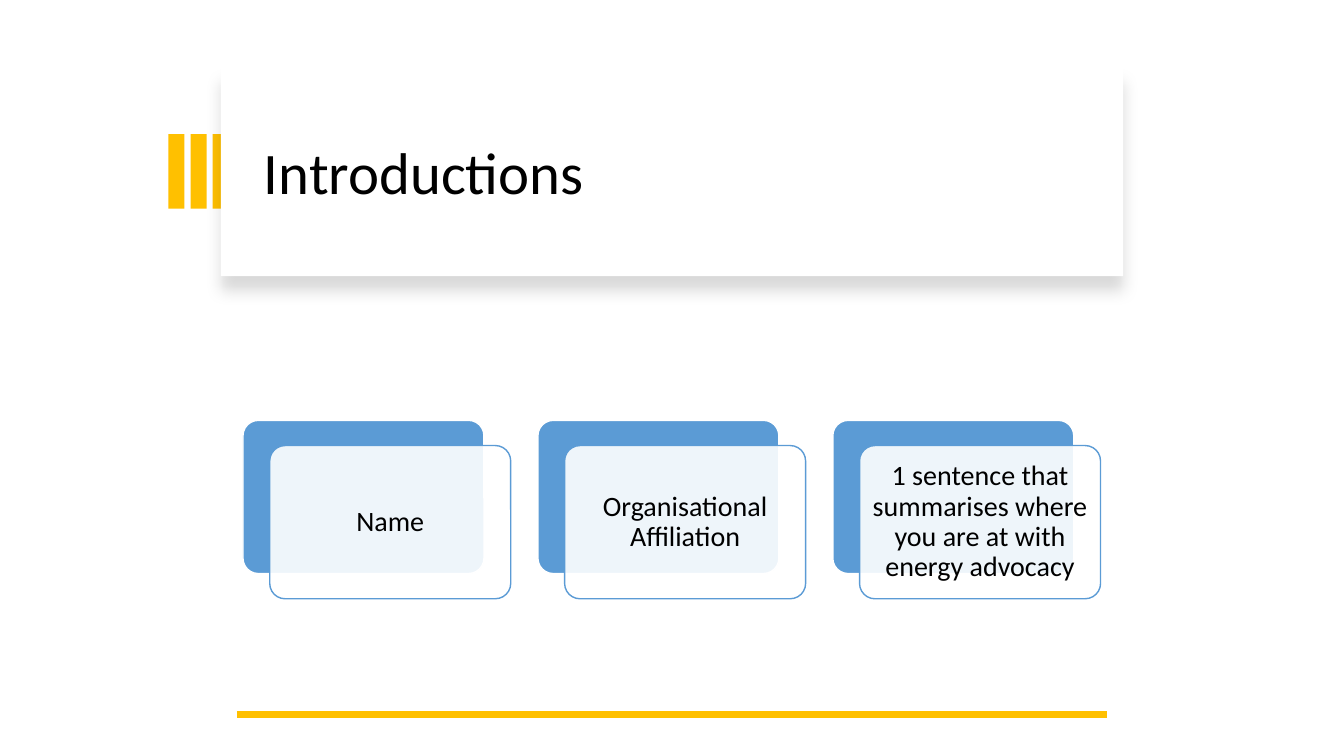
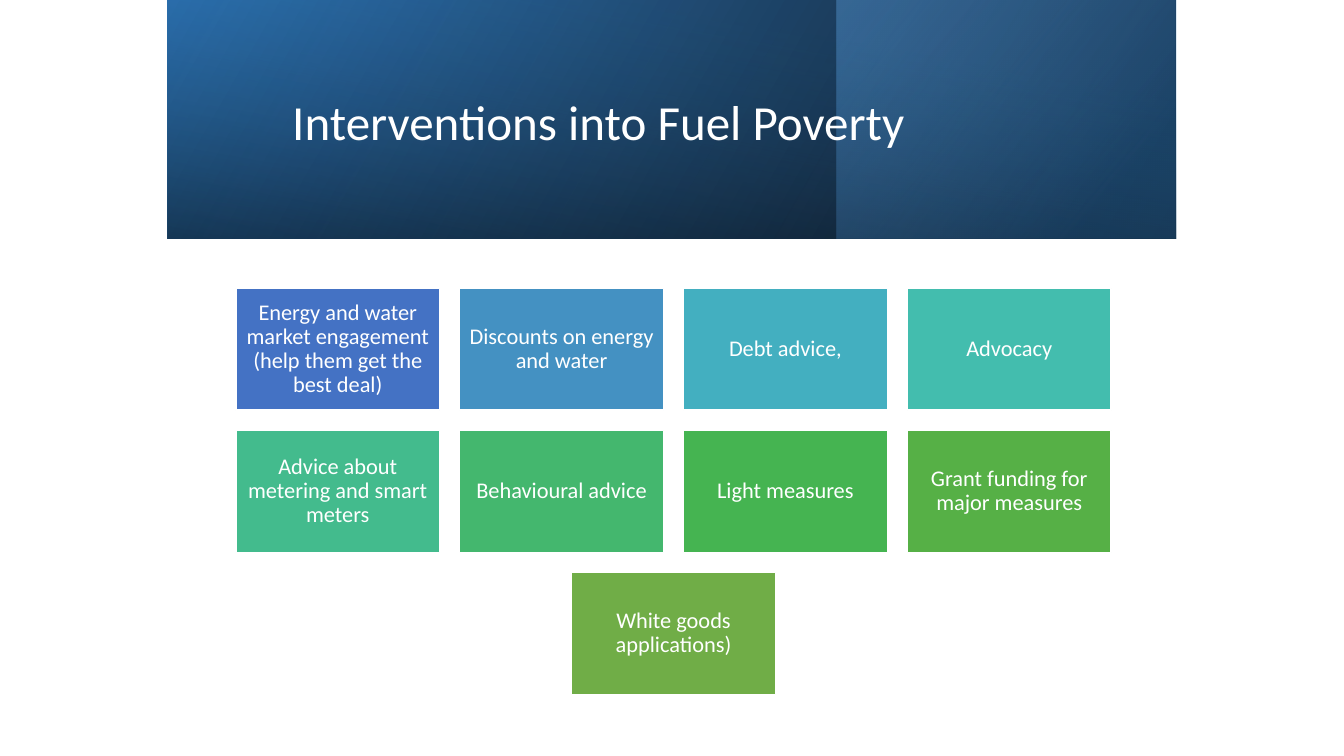
from dataclasses import dataclass
from typing import NamedTuple

from lxml import etree
from pptx import Presentation
from pptx import util as u
from pptx.dml.color import RGBColor
from pptx.enum import shapes, text
from pptx.oxml.ns import qn

SLIDE_W, SLIDE_H = 13.33, 7.5
FONT = "Calibri"
BLACK, WHITE = "000000", "FFFFFF"
GOLD, BLUE, DEEP_BLUE, NAVY = "FFC000", "5B9BD5", "2E75B6", "1F4E79"


class Box(NamedTuple):
    left: float
    top: float
    width: float
    height: float

    def emu(self) -> list[int]:
        return [u.Inches(v) for v in self]

    def shifted(self, dx: float, dy: float) -> "Box":
        return self._replace(left=self.left + dx, top=self.top + dy)


@dataclass(frozen=True)
class Grid:
    first: Box
    columns: int
    pitch_x: float
    pitch_y: float = 0

    def cells(self, count: int) -> list[Box]:
        """Fill row by row; a short last row is centred."""
        cells = []
        for i in range(count):
            row, col = divmod(i, self.columns)
            in_row = min(self.columns, count - row * self.columns)
            indent = (self.columns - in_row) / 2
            cells.append(self.first.shifted((col + indent) * self.pitch_x, row * self.pitch_y))
        return cells


class Stop(NamedTuple):
    position: float
    color: str
    alpha: int


@dataclass(frozen=True)
class Gradient:
    box: Box
    angle: int  # counterclockwise
    stops: tuple[Stop, Stop]


class Tile(NamedTuple):
    label: str
    color: str


BARS = Grid(Box(1.67, 1.33, 0.16, 0.74), 3, 0.22)
CARDS = Grid(Box(2.41, 4.17, 2.39, 1.52), 3, 2.925)
TILES = Grid(Box(2.34, 2.86, 2.02, 1.21), 4, 2.22, 1.41)

BANNER = Box(SLIDE_W / 8, 0, SLIDE_W * 3 / 4, 2.37)
BANNER_LAYERS = [
    Gradient(BANNER, 150, (Stop(0, BLACK, 96), Stop(1, DEEP_BLUE, 100))),
    Gradient(Box(8.3, 0, 3.36, 2.37), 140, (Stop(0.19, NAVY, 68), Stop(1, BLUE, 48))),
    Gradient(BANNER, 260, (Stop(0.23, DEEP_BLUE, 16), Stop(0.99, BLACK, 45))),
]

INTRO_ITEMS = [
    "Name",
    "Organisational Affiliation",
    "1 sentence that summarises where you are at with energy advocacy",
]
INTERVENTIONS = [
    Tile("Energy and water market engagement (help them get the best deal)", "4472C4"),
    Tile("Discounts on energy and water", "4491C2"),
    Tile("Debt advice,", "43AFC0"),
    Tile("Advocacy", "43BDAE"),
    Tile("Advice about metering and smart meters", "43BB8D"),
    Tile("Behavioural advice", "44B76E"),
    Tile("Light measures", "45B451"),
    Tile("Grant funding for major measures", "56B046"),
    Tile("White goods applications)", "70AD47"),
]


def rgb(color: str) -> RGBColor:
    return RGBColor.from_string(color)


def set_alpha(color_element, percent: int) -> None:
    etree.SubElement(color_element, qn("a:alpha"), val=str(percent * 1000))


def add_box(s, box: Box, fill: str | None = None, line: str | None = None,
            rounded: bool = False, alpha: int = 100):
    kind = shapes.MSO_SHAPE.ROUNDED_RECTANGLE if rounded else shapes.MSO_SHAPE.RECTANGLE
    sp = s.shapes.add_shape(kind, *box.emu())
    sp.shadow.inherit = False
    if rounded:
        sp.adjustments[0] = 0.1
    if fill:
        sp.fill.solid()
        sp.fill.fore_color.rgb = rgb(fill)
        if alpha < 100:
            set_alpha(sp.element.spPr.find(".//" + qn("a:srgbClr")), alpha)
    if line:
        sp.line.color.rgb = rgb(line)
        sp.line.width = u.Pt(1)
    else:
        sp.line.fill.background()
    return sp


def add_gradient(s, layer: Gradient) -> None:
    sp = add_box(s, layer.box)
    sp.fill.gradient()
    sp.fill.gradient_angle = layer.angle
    for target, stop in zip(sp.fill.gradient_stops, layer.stops):
        target.position = stop.position
        target.color.rgb = rgb(stop.color)
    colors = sp.element.spPr.iter(qn("a:srgbClr"))
    for element, stop in zip(list(colors), layer.stops):
        set_alpha(element, stop.alpha)


def add_drop_shadow(sp) -> None:
    effects = sp.element.spPr.find(qn("a:effectLst"))
    shadow = etree.SubElement(
        effects, qn("a:outerShdw"), blurRad=str(u.Pt(11)), dist=str(u.Pt(10)),
        dir=str(90 * 60000), algn="t", rotWithShape="0")
    set_alpha(etree.SubElement(shadow, qn("a:srgbClr"), val=BLACK), 15)


def write(sp, label: str, *, size: float, color: str, inset: float | None = None,
          align=text.PP_ALIGN.CENTER) -> None:
    tf = sp.text_frame
    tf.word_wrap = True
    tf.vertical_anchor = text.MSO_ANCHOR.MIDDLE
    if inset is not None:
        tf.margin_left = tf.margin_right = tf.margin_top = tf.margin_bottom = u.Inches(inset)
    p = tf.paragraphs[0]
    p.alignment = align
    p.line_spacing = 0.9
    r = p.add_run()
    r.text = label
    r.font.name = FONT
    r.font.size = u.Pt(size)
    r.font.color.rgb = rgb(color)


def add_title(s, box: Box, label: str, *, size: float, color: str) -> None:
    write(s.shapes.add_textbox(*box.emu()), label, size=size, color=color,
          align=text.PP_ALIGN.LEFT)


def add_rule(s, left: float, right: float, y: float) -> None:
    ends = [u.Inches(v) for v in (left, y, right, y)]
    rule = s.shapes.add_connector(shapes.MSO_CONNECTOR.STRAIGHT, *ends)
    rule.line.color.rgb = rgb(GOLD)
    rule.line.width = u.Pt(4.5)
    etree.SubElement(rule.element.spPr, qn("a:effectLst"))


def build_introductions(s) -> None:
    for bar in BARS.cells(3):
        add_box(s, bar, GOLD)
    add_drop_shadow(add_box(s, Box(2.19, 0.67, 8.95, 2.07), WHITE))
    add_title(s, Box(2.52, 0.89, 8.34, 1.7), "Introductions", size=42, color=BLACK)
    add_rule(s, 2.35, 10.98, 7.09)
    for label, cell in zip(INTRO_ITEMS, CARDS.cells(len(INTRO_ITEMS))):
        add_box(s, cell, BLUE, WHITE, rounded=True)
        card = add_box(s, cell.shifted(0.265, 0.25), WHITE, BLUE, rounded=True, alpha=90)
        write(card, label, size=20, color=BLACK, inset=0.08)


def build_interventions(s) -> None:
    for layer in BANNER_LAYERS:
        add_gradient(s, layer)
    add_title(s, Box(2.8, 0.38, 7.97, 1.72), "Interventions into Fuel Poverty",
              size=35, color=WHITE)
    for tile, cell in zip(INTERVENTIONS, TILES.cells(len(INTERVENTIONS))):
        write(add_box(s, cell, tile.color, WHITE), tile.label,
              size=16, color=WHITE, inset=0.07)


def main() -> None:
    prs = Presentation()
    prs.slide_width, prs.slide_height = u.Inches(SLIDE_W), u.Inches(SLIDE_H)
    for build in (build_introductions, build_interventions):
        build(prs.slides.add_slide(prs.slide_layouts[6]))
    prs.save("out.pptx")


if __name__ == "__main__":
    main()
